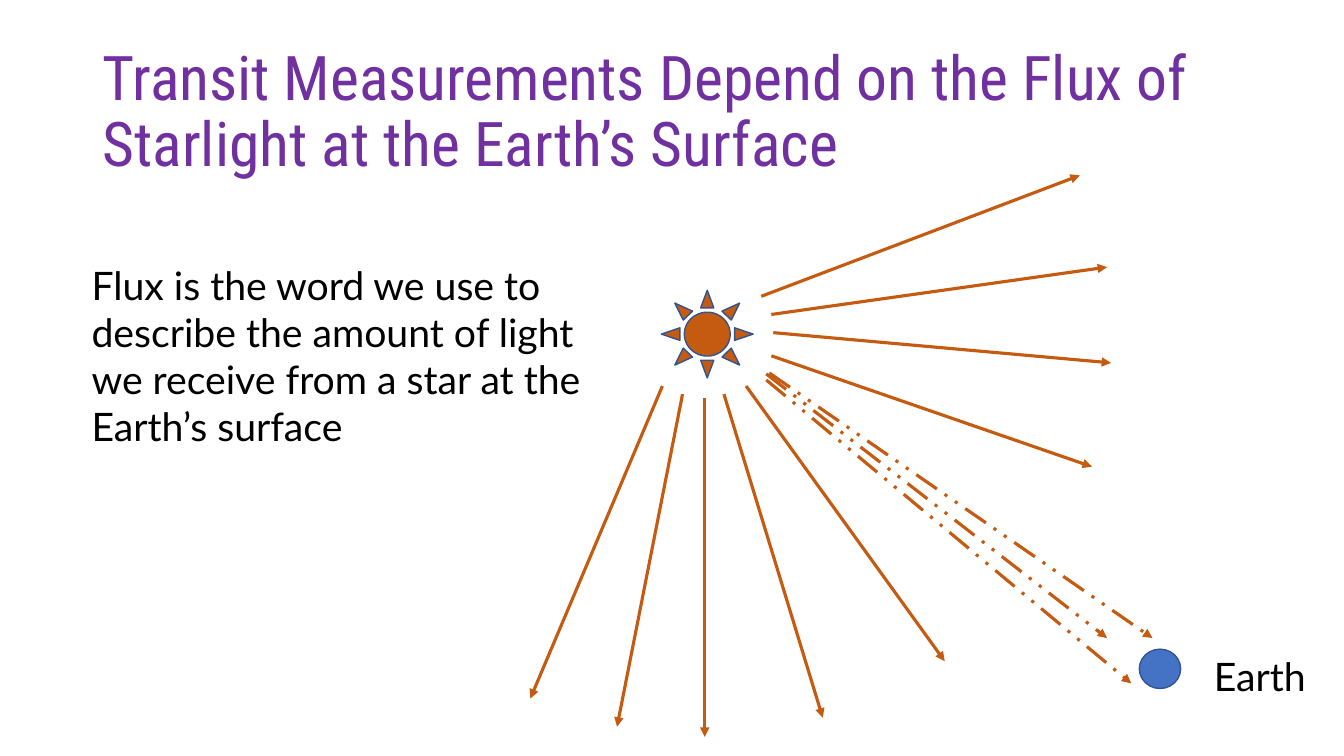
from lxml import etree
from pptx import Presentation
from pptx.dml.color import RGBColor
from pptx.enum import dml, shapes, text
from pptx.oxml.ns import qn
from pptx.util import Inches, Pt

COLORS = {"title": "7030A0", "body": "000000", "star": "C55A11",
          "earth": "4472C4", "outline": "325491"}

# text, box (left, top, width, height), font, size, color, anchor, line spacing
TEXTS = [
    ("Transit Measurements Depend on the Flux of Starlight at the Earth’s Surface",
     (0.92, 0.4, 11.5, 1.45), "Roboto Condensed", 44, "title", "MIDDLE", 0.9),
    ("Flux is the word we use to describe the amount of light we receive "
     "from a star at the Earth’s surface",
     (0.81, 2.54, 5.21, 1.99), "Lato", 28, "body", "TOP", 1.0),
    ("Earth", (11.94, 6.42, 1.14, 0.57), "Lato", 28, "body", "TOP", 1.0),
]

# preset, box, fill
BODIES = [
    ("SUN", (6.56, 2.88, 0.91, 0.87), "star"),
    ("OVAL", (11.3, 6.44, 0.41, 0.39), "earth"),
]

# x1, y1, x2, y2, clockwise from the upper right
RAYS_MISSING_EARTH = [
    (7.55, 2.94, 10.71, 1.74),
    (7.65, 3.12, 10.98, 2.65),
    (7.67, 3.3, 11.02, 3.6),
    (7.65, 3.53, 10.83, 4.63),
    (7.4, 3.83, 9.37, 6.56),
    (7.18, 3.91, 8.16, 7.12),
    (6.99, 3.95, 6.99, 7.31),
    (6.77, 3.91, 6.12, 7.21),
    (6.57, 3.83, 5.26, 6.93),
]
RAYS_REACHING_EARTH = [
    (7.63, 3.7, 11.43, 6.33),
    (7.6, 3.71, 10.98, 6.33),
    (7.6, 3.77, 11.22, 6.78),
]


def rgb(name):
    return RGBColor.from_string(COLORS[name])


def add_text(s, content, box, font, size, color, anchor, spacing):
    tf = s.shapes.add_textbox(*map(Inches, box)).text_frame
    tf.word_wrap = True
    tf.vertical_anchor = text.MSO_ANCHOR[anchor]
    tf.text = content
    p = tf.paragraphs[0]
    p.line_spacing = spacing
    r = p.runs[0]
    r.font.name, r.font.size = font, Pt(size)
    r.font.color.rgb = rgb(color)


def add_body(s, preset, box, fill):
    sp = s.shapes.add_shape(shapes.MSO_SHAPE[preset], *map(Inches, box))
    sp.shadow.inherit = False
    sp.fill.solid()
    sp.fill.fore_color.rgb = rgb(fill)
    sp.line.color.rgb = rgb("outline")
    sp.line.width = Pt(1)


def add_ray(s, ends, dash=None):
    ray = s.shapes.add_connector(shapes.MSO_CONNECTOR.STRAIGHT, *map(Inches, ends))
    ray.line.color.rgb = rgb("star")
    ray.line.width = Pt(2.25)
    if dash:
        ray.line.dash_style = dash
    props = ray._element.spPr
    etree.SubElement(props.find(qn("a:ln")), qn("a:tailEnd"), type="triangle")
    etree.SubElement(props, qn("a:effectLst"))


def main():
    prs = Presentation()
    prs.slide_width, prs.slide_height = Inches(13.33), Inches(7.5)
    s = prs.slides.add_slide(prs.slide_layouts[6])
    for body in BODIES:
        add_body(s, *body)
    for ends in RAYS_MISSING_EARTH:
        add_ray(s, ends)
    for ends in RAYS_REACHING_EARTH:
        add_ray(s, ends, dml.MSO_LINE.DASH_DOT_DOT)
    for item in TEXTS:
        add_text(s, *item)
    prs.save("out.pptx")


if __name__ == "__main__":
    main()
